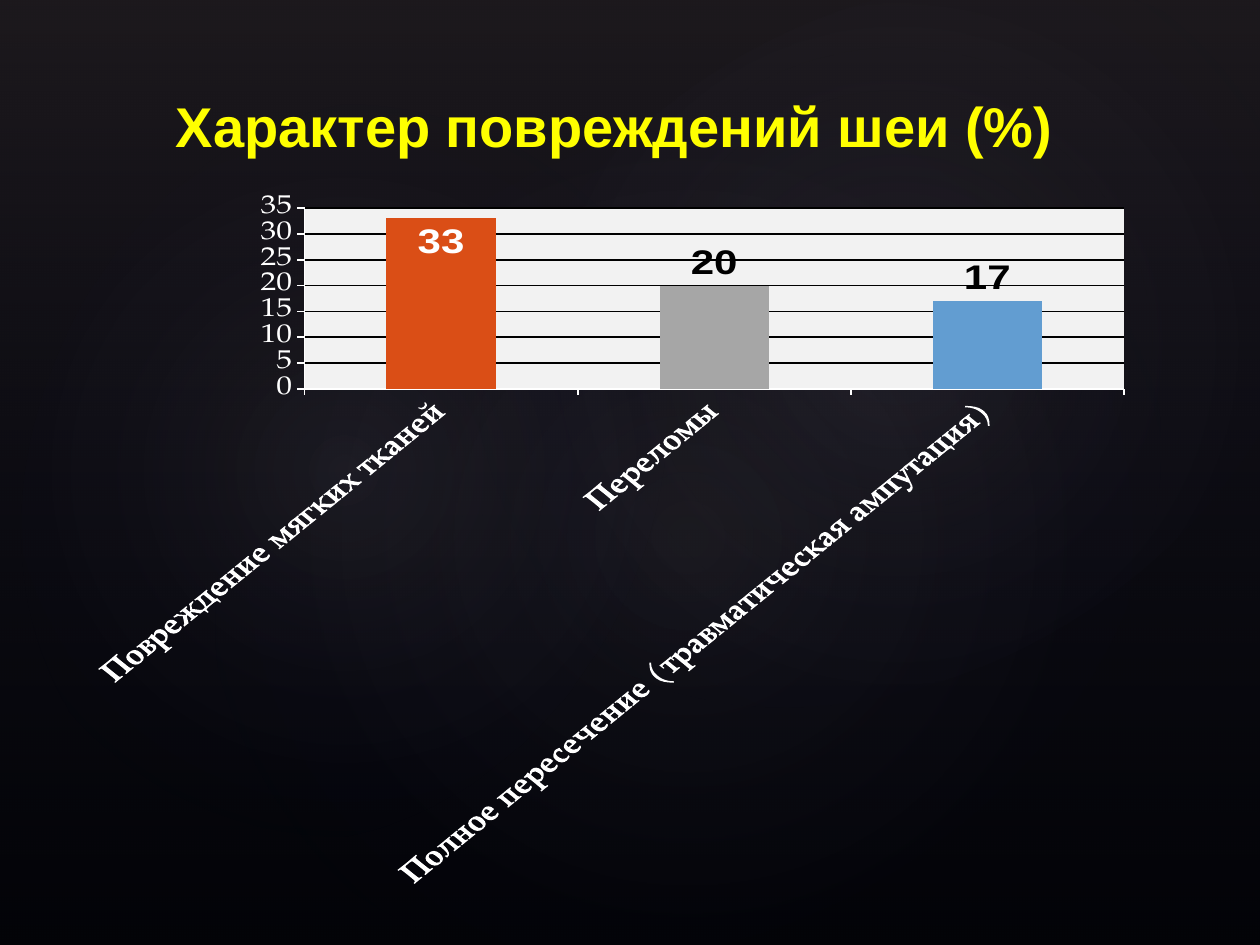
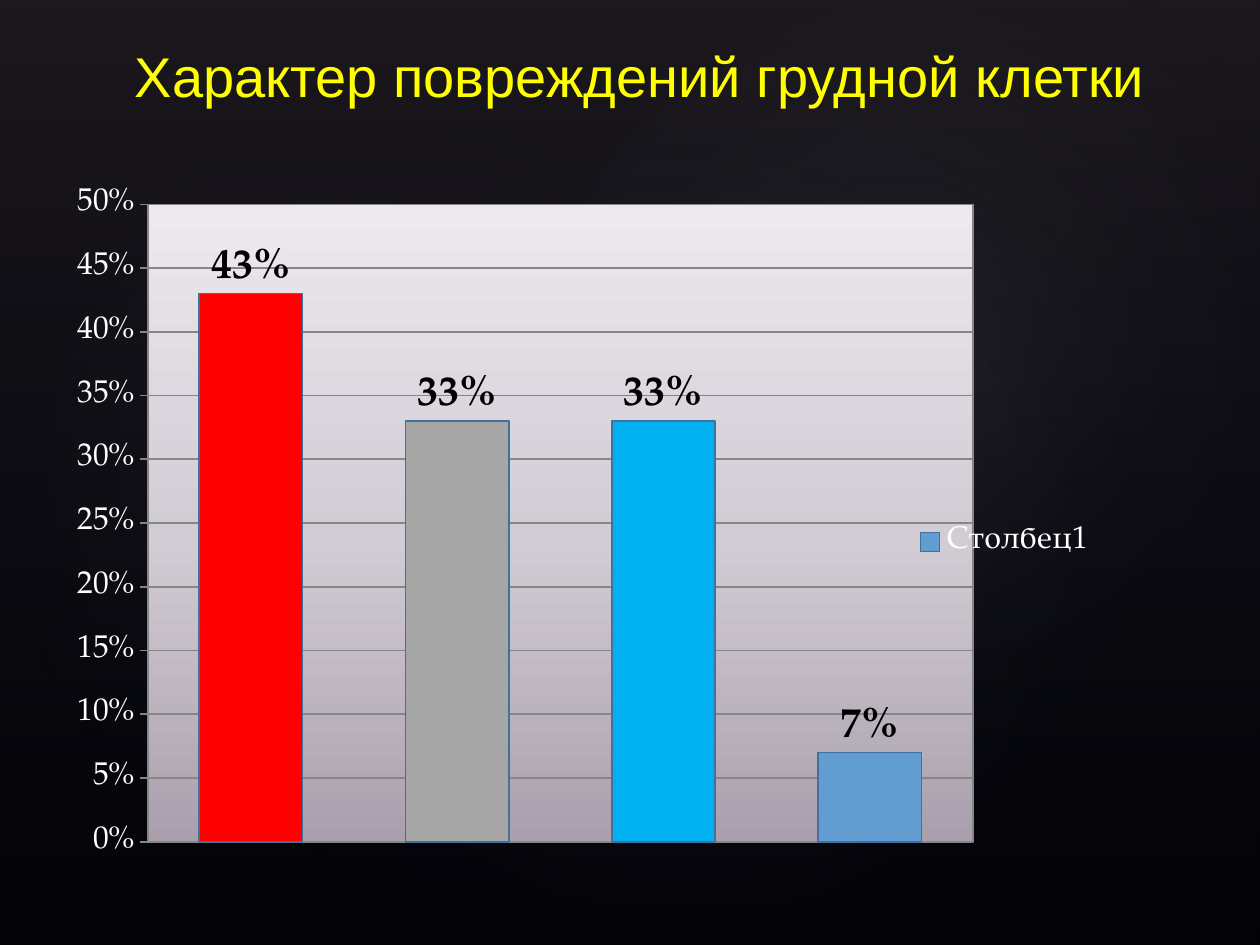
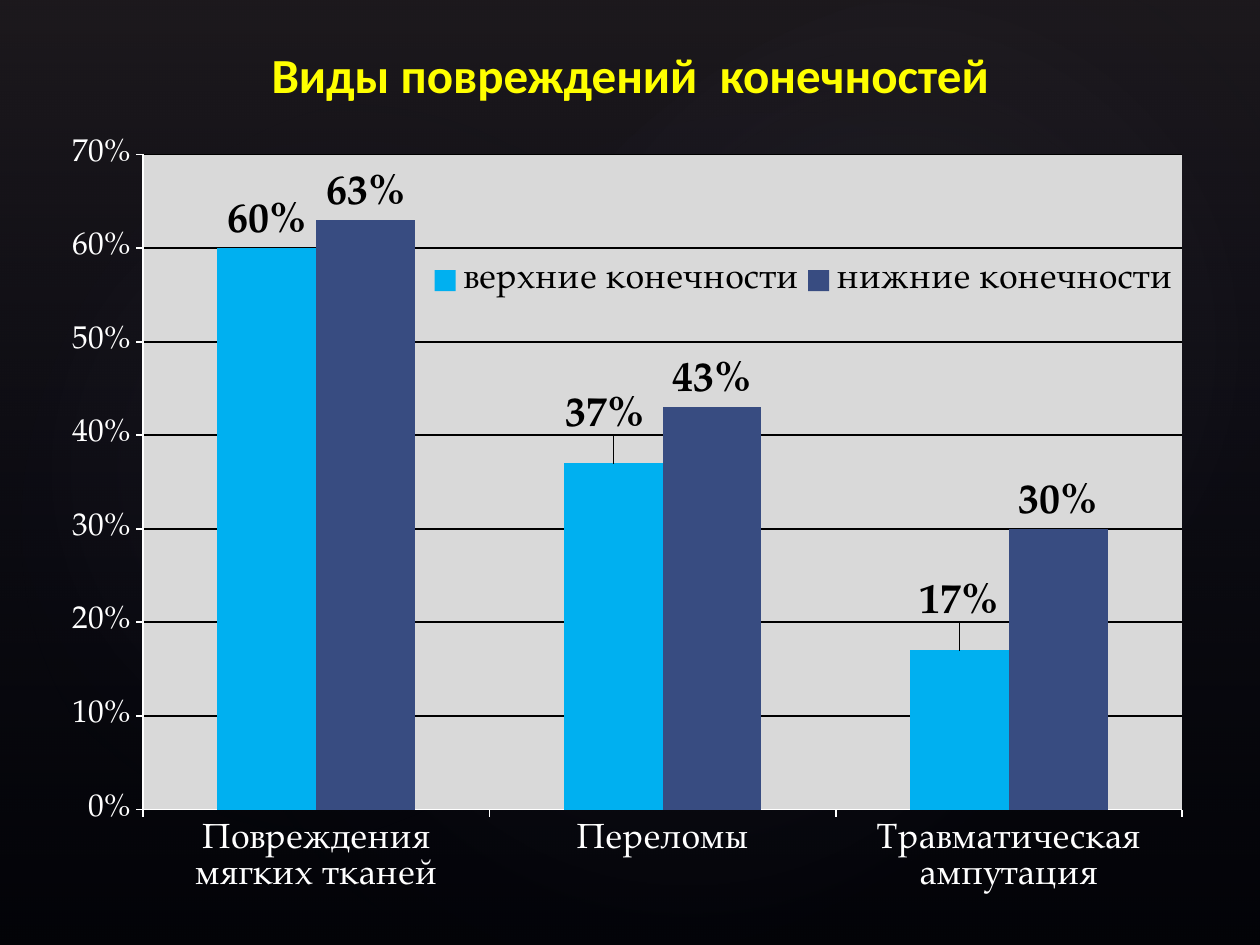
"""Builds three dark slides with column charts of injury patterns."""
import pptx
import pptx.chart.data
import pptx.dml.color
import pptx.enum.chart
import pptx.enum.shapes
import pptx.enum.text
import pptx.oxml
import pptx.oxml.ns
import pptx.util
from pptx.util import Inches, Pt

WHITE, BLACK, YELLOW, GREY, EDGE = "FFFFFF", "000000", "FFFF00", "868686", "41719C"
BODY_FONT = "TeX Gyre Pagella"
NAMESPACES = pptx.oxml.ns.nsdecls("a", "c")
LABEL = pptx.enum.chart.XL_LABEL_POSITION

BACKDROP_STOPS = [(0, "504652", 36), (100, "242852", 10)]
GLOWS = [
    ((1.5, 1.14, 7.92, 6.24), 328.7, 7),
    ((-0.3, 1.28, 6.06, 4.9), 294.3, 8),
    ((3.58, 0.13, 7.09, 5.2), 328.7, 8),
]
SLIDES = [
    dict(
        title="Характер повреждений шеи (%)",
        title_at=(1.27, 0.68, 7.22, 0.64),
        title_format=dict(size=32, font="Arial", bold=True),
        chart_at=(0.59, 1.55, 8.5, 5.51),
        categories=["Повреждение мягких тканей", "Переломы",
                    "Полное пересечение (травматическая ампутация)"],
        series=[("Series 1", [33, 20, 17], "629DD1")],
        points={0: "DA4E16", 1: "A6A6A6"},
        number_format="General", scale=(35, 5), gap=150,
        category_format=dict(size=20, bold=True), category_turn=-45,
        label_font="Arial", inside_label=0,
        plot_stops=[(0, "F2F2F2", 100), (100, "F2F2F2", 100)],
    ),
    dict(
        title="Характер повреждений грудной клетки",
        title_at=(0.59, 0.28, 8.98, 0.64),
        title_format=dict(size=32, font="Arial"),
        chart_at=(0.43, 1.39, 9.06, 5.53),
        categories=["1", "2", "3", "4"],
        series=[("Столбец1", [0.43, 0.33, 0.33, 0.07], "629DD1")],
        points={0: "FF0000", 1: "A6A6A6", 2: "00B0F0"},
        number_format="0%", scale=(0.5, 0.05), gap=100,
        grid=GREY, axis_line=GREY, outline=EDGE,
        plot_at=dict(x=0.082, y=0.042, w=0.723, h=0.915),
        plot_stops=[(0, "AAA0AD", 100), (48, "D2CCD4", 100), (100, "EDE9EE", 100)],
        legend_at=dict(x=0.75, y=0.495), legend_format=dict(size=18),
    ),
    dict(
        title="Виды повреждений  конечностей",
        title_at=(0.5, 0.3, 9, 0.85),
        title_format=dict(size=28, font="Calibri", bold=True),
        chart_at=(0.28, 0.92, 9.53, 6.38),
        categories=["Повреждения мягких тканей", "Переломы", "Травматическая ампутация"],
        series=[("верхние конечности", [0.6, 0.37, 0.17], "00B0F0"),
                ("нижние конечности", [0.63, 0.43, 0.3], "384C81")],
        number_format="0%", scale=(0.7, 0.1), gap=150,
        category_format=dict(size=20),
        label_shifts={1: dict(x=-0.007, y=-0.027), 2: dict(x=0, y=-0.027)},
        plot_at=dict(x=0.09, y=0.048, w=0.865, h=0.815),
        plot_stops=[(0, "D9D9D9", 100), (100, "D9D9D9", 100)],
        legend_at=dict(x=0.325, y=0.175, w=0.63, h=0.06),
        legend_format=dict(size=20, color=BLACK),
    ),
]


def rgb(value):
    return pptx.dml.color.RGBColor.from_string(value)


def style(font, size=18, color=WHITE, bold=False, name=BODY_FONT):
    font.size, font.bold, font.name = Pt(size), bold, name
    font.color.rgb = rgb(color)


def add_text(page, text, at, size=18, color=YELLOW, font=BODY_FONT, bold=False):
    box = page.shapes.add_textbox(*map(Inches, at))
    box.text_frame.word_wrap = True
    para = box.text_frame.paragraphs[0]
    para.alignment = pptx.enum.text.PP_ALIGN.CENTER
    span = para.add_run()
    span.text = text
    style(span.font, size, color, bold, font)


def gradient(stops, angle=None):
    marks = "".join(
        f'<a:gs pos="{place * 1000}"><a:srgbClr val="{color}">'
        f'<a:alpha val="{opacity * 1000}"/></a:srgbClr></a:gs>'
        for place, color, opacity in stops)
    if angle is None:
        way = ('<a:path path="circle"><a:fillToRect l="50000" t="50000" '
               'r="50000" b="50000"/></a:path>')
    else:
        way = f'<a:lin ang="{angle * 60000}" scaled="0"/>'
    return f'<a:gradFill {NAMESPACES} rotWithShape="1"><a:gsLst>{marks}</a:gsLst>{way}</a:gradFill>'


def add_glow(page, kind, at, stops, angle=None, turn=0):
    shape = page.shapes.add_shape(kind, *map(Inches, at))
    shape.rotation = turn
    shape.shadow.inherit = False
    shape.line.fill.background()
    shape.fill.background()
    blank_fill = shape.element.xpath("./p:spPr/a:noFill")[0]
    blank_fill.getparent().replace(blank_fill, pptx.oxml.parse_xml(gradient(stops, angle)))
    return shape


def fill_layout(layout, page):
    for placeholder in list(layout.placeholders):
        layout.shapes.element.remove(placeholder.element)
    layout.background.fill.solid()
    layout.background.fill.fore_color.rgb = rgb(BLACK)
    kinds = pptx.enum.shapes.MSO_SHAPE
    parts = [add_glow(page, kinds.RECTANGLE, (0, 0, 10, 7.5), BACKDROP_STOPS, angle=90)]
    for at, turn, opacity in GLOWS:
        stops = [(0, "C4BCC6", opacity), (58, "242852", 0)]
        parts.append(add_glow(page, kinds.OVAL, at, stops, turn=turn))
    for part in parts:
        layout.shapes.element.append(part.element)


def place(element, index, at, modes=""):
    for old in element.xpath("./c:layout"):
        element.remove(old)
    rules = "".join(f'<c:{mode} val="{modes}"/>' for mode in ("xMode", "yMode") if modes)
    if element.tag.endswith("plotArea"):
        rules = '<c:layoutTarget val="inner"/>' + rules
    sizes = "".join(f'<c:{key} val="{value}"/>' for key, value in at.items())
    element.insert(index, pptx.oxml.parse_xml(
        f"<c:layout {NAMESPACES}><c:manualLayout>{rules}{sizes}</c:manualLayout></c:layout>"))


def draw_line(line, color, width=1):
    line.color.rgb = rgb(color)
    line.width = Pt(width)


def format_axes(chart, item):
    axis_line = item.get("axis_line", WHITE)
    values, categories = chart.value_axis, chart.category_axis
    values.minimum_scale = 0
    values.maximum_scale, values.major_unit = item["scale"]
    style(values.tick_labels.font)
    draw_line(values.format.line, axis_line)
    draw_line(values.major_gridlines.format.line, item.get("grid", BLACK))
    if "category_format" not in item:
        categories.visible = False
        return
    style(categories.tick_labels.font, **item["category_format"])
    draw_line(categories.format.line, axis_line)
    if "category_turn" in item:
        body = chart.element.xpath(".//c:catAx/c:txPr/a:bodyPr")[0]
        body.set("rot", str(item["category_turn"] * 60000))
        body.set("vert", "horz")


def format_series(chart, item):
    label_format = dict(size=24, bold=True, name=item.get("label_font", BODY_FONT))
    for series, (_, _, color) in zip(chart.plots[0].series, item["series"]):
        fills = [(series.format, color)]
        fills += [(series.points[index].format, tint)
                  for index, tint in item.get("points", {}).items()]
        for target, tint in fills:
            target.fill.solid()
            target.fill.fore_color.rgb = rgb(tint)
            if "outline" in item:
                draw_line(target.line, item["outline"])
        labels = series.data_labels
        labels.show_value = True
        labels.position = LABEL.OUTSIDE_END
        style(labels.font, color=BLACK, **label_format)
    first = chart.plots[0].series[0]
    if "inside_label" in item:
        label = first.points[item["inside_label"]].data_label
        style(label.font, **label_format)
        label.position = LABEL.INSIDE_END
    for index, shift in item.get("label_shifts", {}).items():
        label = first.points[index].data_label
        style(label.font, color=BLACK, **label_format)
        label.position = LABEL.OUTSIDE_END
        place(chart.element.xpath(f".//c:ser[1]//c:dLbl[c:idx/@val='{index}']")[0], 1, shift)


def add_column_chart(page, item):
    data = pptx.chart.data.CategoryChartData(number_format=item["number_format"])
    data.categories = item["categories"]
    for name, values, _ in item["series"]:
        data.add_series(name, values)
    kind = pptx.enum.chart.XL_CHART_TYPE.COLUMN_CLUSTERED
    chart = page.shapes.add_chart(kind, *map(Inches, item["chart_at"]), data).chart
    style(chart.font)
    chart.has_title = False
    chart.plots[0].gap_width = item["gap"]
    chart.plots[0].vary_by_categories = False
    format_axes(chart, item)
    format_series(chart, item)

    area = chart.element.xpath(".//c:plotArea")[0]
    edge = "<a:ln><a:noFill/></a:ln>"
    if "outline" in item:
        edge = f'<a:ln w="12700"><a:solidFill><a:srgbClr val="{GREY}"/></a:solidFill></a:ln>'
    area.append(pptx.oxml.parse_xml(
        f'<c:spPr {NAMESPACES}>{gradient(item["plot_stops"], 270)}{edge}</c:spPr>'))
    if "plot_at" in item:
        place(area, 0, item["plot_at"], "edge")
    chart.has_legend = "legend_at" in item
    if chart.has_legend:
        chart.legend.position = pptx.enum.chart.XL_LEGEND_POSITION.RIGHT
        chart.legend.include_in_layout = False
        style(chart.legend.font, **item["legend_format"])
        place(chart.element.xpath(".//c:legend")[0], 1, item["legend_at"], "edge")


def main():
    deck = pptx.Presentation()
    deck.slide_width, deck.slide_height = Inches(10), Inches(7.5)
    blank = deck.slide_layouts[6]
    pages = [deck.slides.add_slide(blank) for _ in SLIDES]
    fill_layout(blank, pages[0])
    for page, item in zip(pages, SLIDES):
        add_column_chart(page, item)
        add_text(page, item["title"], item["title_at"], **item["title_format"])
    deck.save("out.pptx")


if __name__ == "__main__":
    main()
